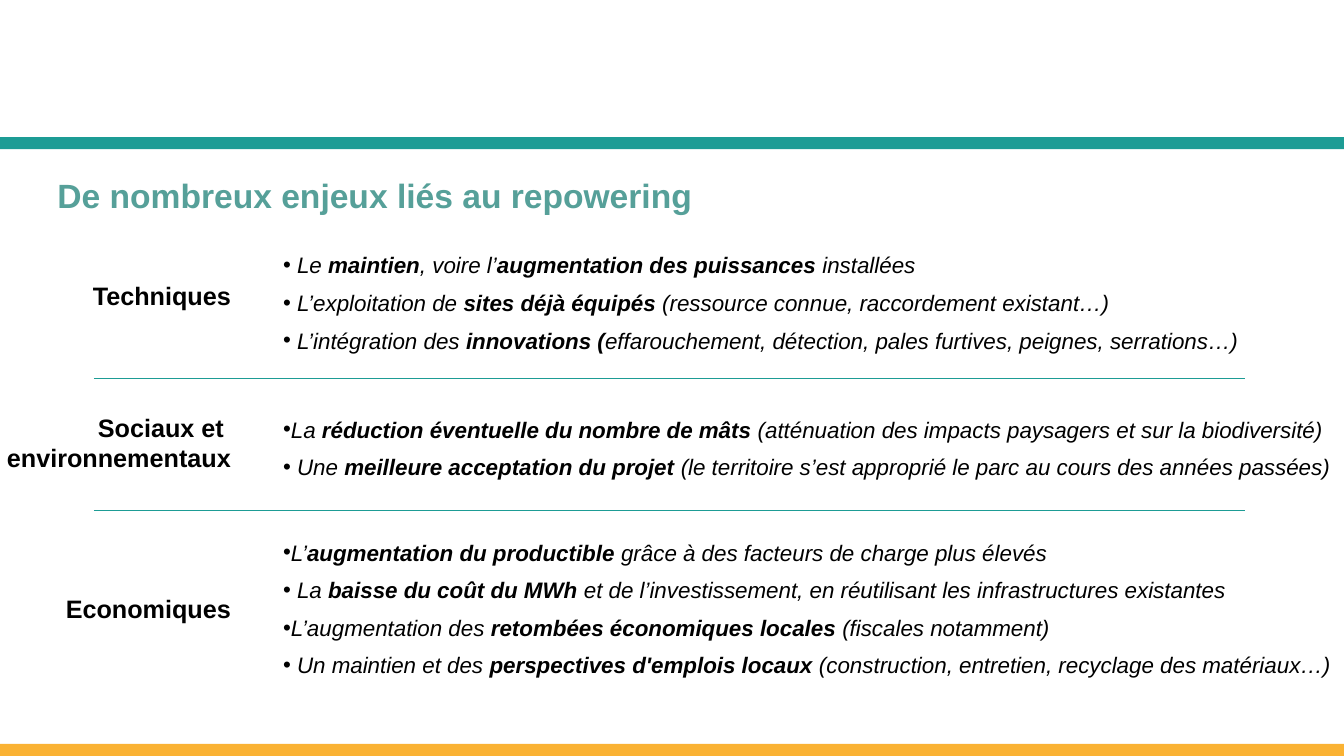
import pptx
import pptx.dml.color
import pptx.enum.shapes
import pptx.enum.text
import pptx.oxml.ns
import pptx.util
from lxml import etree

Pt = pptx.util.Pt
RGBColor = pptx.dml.color.RGBColor
Align = pptx.enum.text.PP_ALIGN

TEAL = RGBColor(0x1D, 0x9C, 0x95)
TITLE_TEAL = RGBColor(0x56, 0xA0, 0x99)
ORANGE = RGBColor(0xFA, 0xB2, 0x33)
BLACK = RGBColor(0, 0, 0)

SLIDE_WIDTH, SLIDE_HEIGHT = 960, 540
BAR_HEIGHT = 8.64
LABEL_RIGHT = 172.08
BULLETS_LEFT = 195.12
BULLETS_WIDTH = SLIDE_WIDTH - BULLETS_LEFT

# Each theme: label lines, label (top, width, height), bullets (top, height),
# and bullets as runs that alternate between regular and bold.
THEMES = [
    (["Techniques"], (196.5, 114.5, 28.8), (168.5, 85.7), [
        [" Le ", "maintien", ", voire l’", "augmentation des puissances ", "installées"],
        [" L’exploitation de ", "sites déjà équipés ",
         "(ressource connue, raccordement existant…)"],
        [" L’intégration des ", "innovations (",
         "effarouchement, détection, pales furtives, peignes, serrations…)"],
    ]),
    (["Sociaux et ", "environnementaux"], (290.9, 176.4, 51.1), (285.8, 58.3), [
        ["La ", "réduction éventuelle du nombre de mâts ",
         "(atténuation des impacts paysagers et sur la biodiversité)"],
        [" Une ", "meilleure acceptation du projet ",
         "(le territoire s’est approprié le parc au cours des années passées)"],
    ]),
    (["Economiques"], (420.5, 133.9, 28.8), (373.7, 113), [
        ["L’", "augmentation du productible ", "grâce à des facteurs de charge plus élevés"],
        [" La ", "baisse du coût du MWh ",
         "et de l’investissement, en réutilisant les infrastructures existantes"],
        ["L’augmentation des ", "retombées économiques locales ", "(fiscales notamment)"],
        [" Un maintien et des ", "perspectives d'emplois locaux ",
         "(construction, entretien, recyclage des matériaux…)"],
    ]),
]
SEPARATOR_TOPS = [270, 364.3]


class SlideBuilder:
    font = "Arial"

    def __init__(self, deck):
        self.page = deck.slides.add_slide(deck.slide_layouts[5])

    def span(self, para, text, size, color=BLACK, bold=False, italic=False):
        span = para.add_run()
        span.text = text
        span.font.name = self.font
        span.font.size = Pt(size)
        span.font.bold = bold
        span.font.italic = italic
        span.font.color.rgb = color

    def title(self, text, left, top, width, height):
        box = self.page.shapes.title
        box.left, box.top, box.width, box.height = map(Pt, (left, top, width, height))
        frame = box.text_frame
        frame.auto_size = pptx.enum.text.MSO_AUTO_SIZE.NONE
        frame.vertical_anchor = pptx.enum.text.MSO_ANCHOR.TOP
        para = frame.paragraphs[0]
        para.alignment = Align.LEFT
        self.span(para, text, 24, TITLE_TEAL, bold=True)

    def bar(self, top, color):
        bar = self.page.shapes.add_shape(
            pptx.enum.shapes.MSO_SHAPE.RECTANGLE,
            0, Pt(top), Pt(SLIDE_WIDTH), Pt(BAR_HEIGHT))
        bar.shadow.inherit = False
        bar.fill.solid()
        bar.fill.fore_color.rgb = color
        bar.line.fill.background()

    def separator(self, left, right, top):
        line = self.page.shapes.add_connector(
            pptx.enum.shapes.MSO_CONNECTOR.STRAIGHT, Pt(left), Pt(top), Pt(right), Pt(top))
        line.line.color.rgb = TEAL
        line.line.width = Pt(0.5)
        properties = line._element.spPr
        etree.SubElement(properties, pptx.oxml.ns.qn("a:effectLst"))

    def paragraphs(self, left, top, width, height, count, wrap):
        """Add a text box and return its paragraphs, count in all."""
        box = self.page.shapes.add_textbox(Pt(left), Pt(top), Pt(width), Pt(height))
        frame = box.text_frame
        frame.word_wrap = wrap
        for _ in range(count - 1):
            frame.add_paragraph()
        return frame.paragraphs

    def label(self, lines, top, width, height):
        paras = self.paragraphs(LABEL_RIGHT - width, top, width, height, len(lines), False)
        for para, text in zip(paras, lines):
            para.alignment = Align.RIGHT
            self.span(para, text, 18, bold=True)

    def bullets(self, items, top, height):
        paras = self.paragraphs(BULLETS_LEFT, top, BULLETS_WIDTH, height, len(items), True)
        for para, texts in zip(paras, items):
            para.line_spacing = 1.4
            properties = para._p.get_or_add_pPr()
            etree.SubElement(properties, pptx.oxml.ns.qn("a:buFont"), typeface=self.font)
            etree.SubElement(properties, pptx.oxml.ns.qn("a:buChar"), char="•")
            for index, text in enumerate(texts):
                self.span(para, text, 16, bold=index % 2 == 1, italic=True)


def main():
    deck = pptx.Presentation()
    deck.slide_width, deck.slide_height = Pt(SLIDE_WIDTH), Pt(SLIDE_HEIGHT)
    builder = SlideBuilder(deck)
    builder.bar(97.9, TEAL)
    builder.bar(SLIDE_HEIGHT - BAR_HEIGHT, ORANGE)
    builder.title("De nombreux enjeux liés au repowering", 33.8, 121, 816.5, 36)
    for lines, label_place, bullets_place, items in THEMES:
        builder.label(lines, *label_place)
        builder.bullets(items, *bullets_place)
    for top in SEPARATOR_TOPS:
        builder.separator(67, 889.2, top)
    deck.save("out.pptx")


if __name__ == "__main__":
    main()
